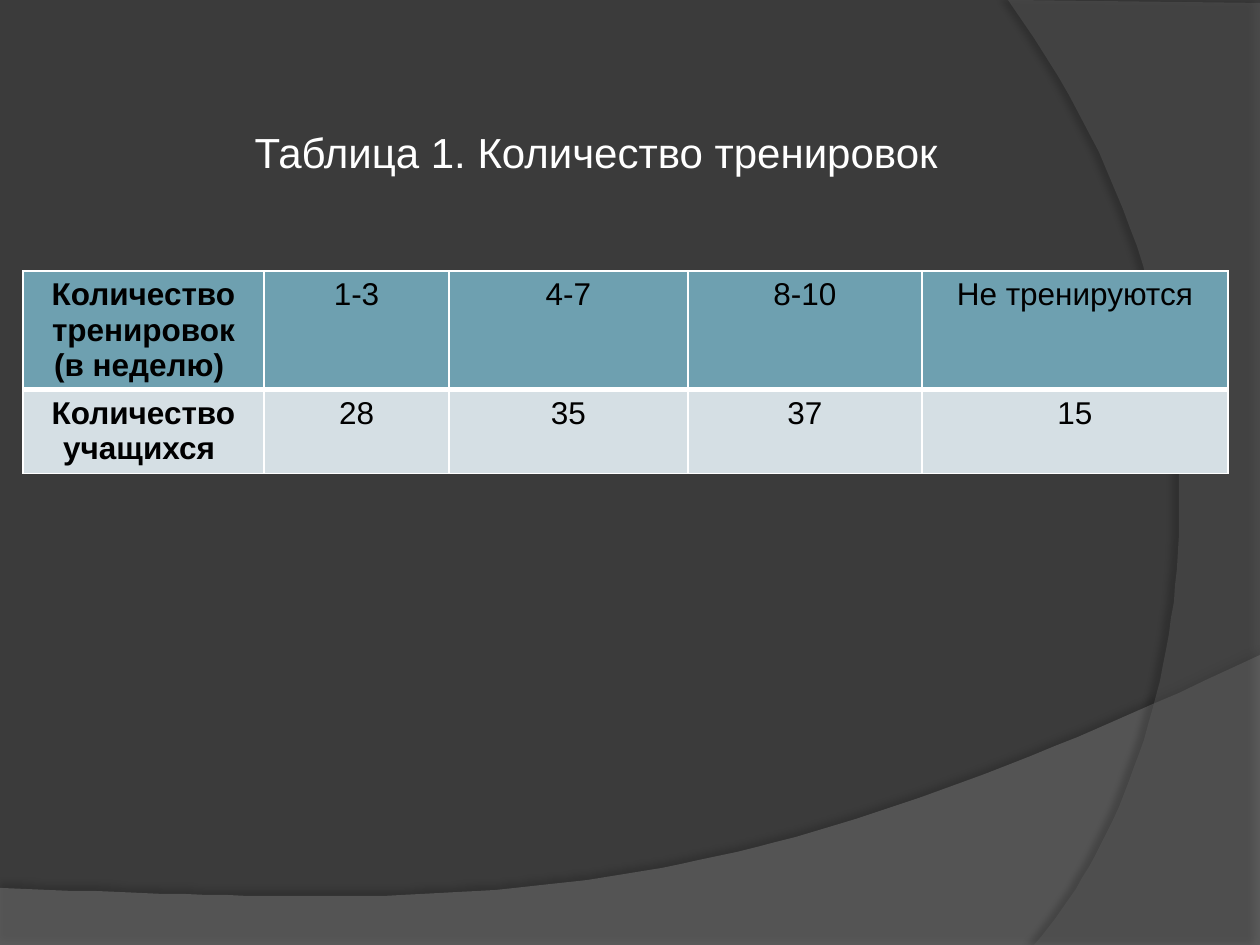
from dataclasses import dataclass

from lxml.etree import SubElement
from pptx import Presentation
from pptx.dml.color import RGBColor
from pptx.enum.text import MSO_ANCHOR, PP_ALIGN
from pptx.oxml.ns import qn
from pptx.util import Emu, Pt

SCALE = 914400 // 126
SLIDE_SIZE = (1260, 945)

TITLE = "Таблица 1. Количество тренировок "
TITLE_BOX = (239, 120, 726, 63)

ROWS = [
    ["Количество тренировок\n(в неделю) ", "1-3", "4-7", "8-10", "Не тренируются"],
    ["Количество учащихся ", "28", "35", "37", "15"],
]
TABLE_ORIGIN = (23, 271)
COLUMN_WIDTHS = (241, 185, 239, 234, 306)
ROW_HEIGHTS = (117, 84)


@dataclass(frozen=True)
class Theme:
    font: str = "Arial"
    title_size: int = 24
    table_size: int = 18
    background: str = "3B3B3B"
    title: str = "FFFFFF"
    table_text: str = "000000"
    row_fills: tuple = ("6EA0B0", "D5DFE4")
    border: str = "FFFFFF"
    thin: int = 1
    thick: int = 3
    shadow: str = "000000"


THEME = Theme()

# Each band is a straight outline closed by a cubic curve (four control points).
BANDS = [
    dict(corners=[(0, 888), (0, 946), (1260, 946)],
         curve=[(1260, 655), (704, 919), (493, 906), (0, 888)],
         color="7F7F7F", opacity=45,
         shadow=dict(opacity=35, blur=4, distance=3.5, angle=270)),
    dict(corners=[(1260, 3), (1260, 945)],
         curve=[(1034, 945), (1178, 780), (1283, 378), (1008, 0)],
         color="5E5E5E", opacity=40,
         shadow=dict(opacity=45, blur=4, distance=4, angle=180)),
]


def px(value):
    return Emu(round(value * SCALE))


def paint(fill, color):
    fill.solid()
    fill.fore_color.rgb = RGBColor.from_string(color)


def add_alpha(color_element, opacity):
    SubElement(color_element, qn("a:alpha"), val=str(opacity * 1000))


def curve_points(controls, steps=60):
    """Sample a cubic Bezier curve."""
    for step in range(steps + 1):
        t = step / steps
        weights = ((1 - t) ** 3, 3 * t * (1 - t) ** 2, 3 * t * t * (1 - t), t ** 3)
        yield tuple(sum(w * point[axis] for w, point in zip(weights, controls))
                    for axis in (0, 1))


def add_shadow(shape, opacity, blur, distance, angle):
    effects = SubElement(shape._element.spPr, qn("a:effectLst"))
    outer = SubElement(effects, qn("a:outerShdw"), blurRad=str(Pt(blur)),
                       dist=str(Pt(distance)), dir=str(angle * 60000),
                       algn="ctr", rotWithShape="0")
    add_alpha(SubElement(outer, qn("a:srgbClr"), val=THEME.shadow), opacity)


def add_band(slide, corners, curve, color, opacity, shadow):
    start, *rest = corners + list(curve_points(curve))
    builder = slide.shapes.build_freeform(*start, scale=SCALE)
    builder.add_line_segments(rest, close=True)
    band = builder.convert_to_shape()
    paint(band.fill, color)
    add_alpha(band._element.spPr.find(f".//{qn('a:srgbClr')}"), opacity)
    band.line.fill.background()
    add_shadow(band, **shadow)


def format_text(frame, size, color, bold=False):
    for paragraph in frame.paragraphs:
        paragraph.alignment = PP_ALIGN.CENTER
        for run in paragraph.runs:
            run.font.name = THEME.font
            run.font.size = Pt(size)
            run.font.bold = bold
            run.font.color.rgb = RGBColor.from_string(color)


def add_title(slide):
    title = slide.shapes.title
    title.left, title.top, title.width, title.height = map(px, TITLE_BOX)
    frame = title.text_frame
    frame.text = TITLE
    frame.word_wrap = False
    frame.vertical_anchor = MSO_ANCHOR.TOP
    format_text(frame, THEME.title_size, THEME.title)


def add_borders(cell, top, bottom):
    properties = cell._tc.get_or_add_tcPr()
    widths = dict(lnL=THEME.thin, lnR=THEME.thin, lnT=top, lnB=bottom)
    for side, width in widths.items():
        line = SubElement(properties, qn(f"a:{side}"), w=str(Pt(width)))
        SubElement(SubElement(line, qn("a:solidFill")), qn("a:srgbClr"), val=THEME.border)


def add_training_table(slide):
    table = slide.shapes.add_table(
        len(ROWS), len(COLUMN_WIDTHS), *map(px, TABLE_ORIGIN),
        px(sum(COLUMN_WIDTHS)), px(sum(ROW_HEIGHTS))).table
    for column, width in zip(table.columns, COLUMN_WIDTHS):
        column.width = px(width)
    for row, height in zip(table.rows, ROW_HEIGHTS):
        row.height = px(height)
    for r, texts in enumerate(ROWS):
        is_header = r == 0
        top, bottom = (THEME.thin, THEME.thick) if is_header else (THEME.thick, THEME.thin)
        for c, text in enumerate(texts):
            cell = table.cell(r, c)
            cell.text_frame.text = text
            format_text(cell.text_frame, THEME.table_size, THEME.table_text, bold=c == 0)
            add_borders(cell, top, bottom)
            paint(cell.fill, THEME.row_fills[r])


def main():
    presentation = Presentation()
    presentation.slide_width, presentation.slide_height = map(px, SLIDE_SIZE)
    slide = presentation.slides.add_slide(presentation.slide_layouts[5])
    paint(slide.background.fill, THEME.background)
    for band in BANDS:
        add_band(slide, **band)
    add_training_table(slide)
    add_title(slide)
    presentation.save("out.pptx")


if __name__ == "__main__":
    main()
